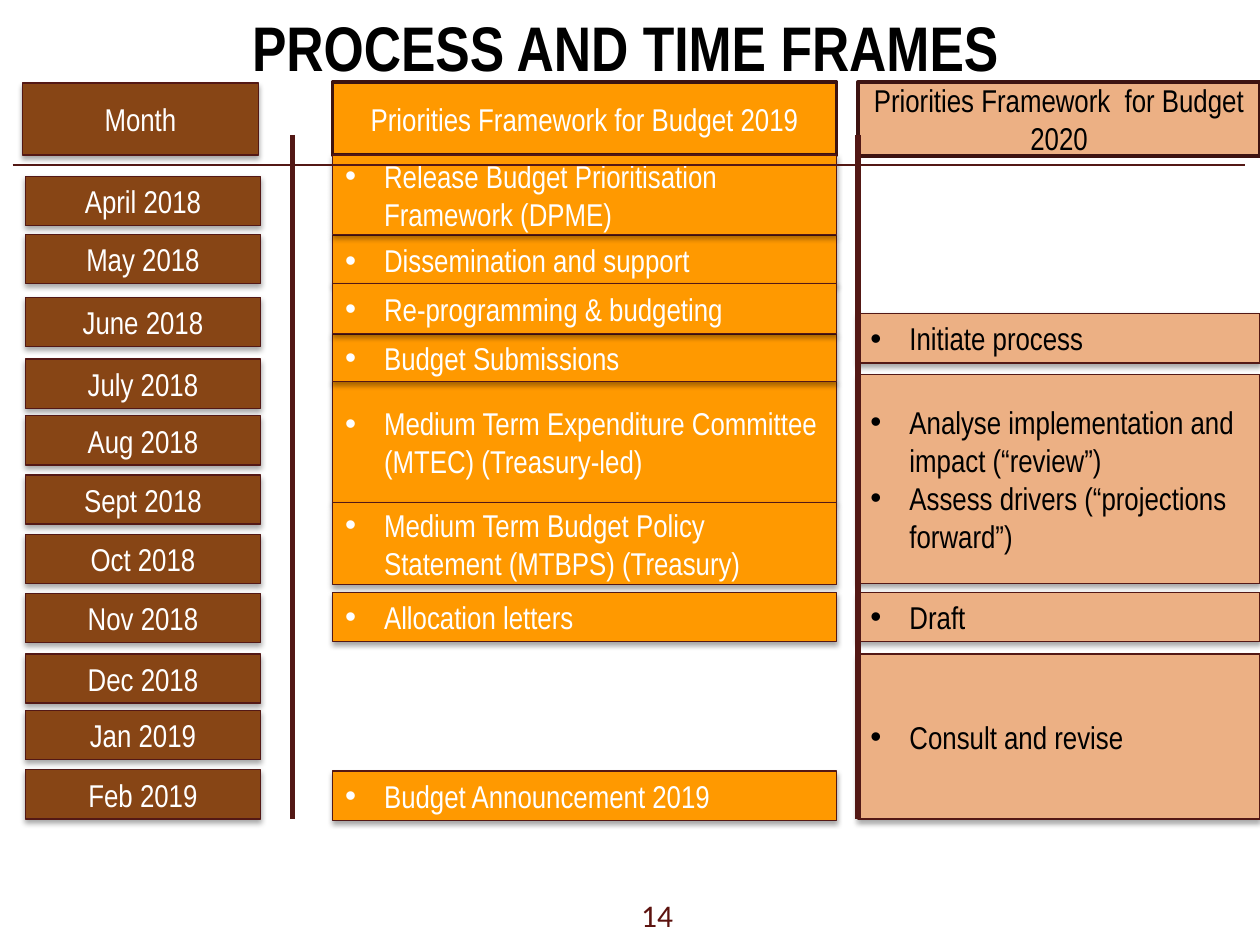
from dataclasses import dataclass

from lxml import etree
from pptx import Presentation
from pptx.dml.color import RGBColor
from pptx.enum.shapes import MSO_CONNECTOR, MSO_SHAPE
from pptx.enum.text import MSO_ANCHOR, PP_ALIGN
from pptx.oxml.ns import qn
from pptx.util import Emu, Pt

RECT = MSO_SHAPE.RECTANGLE
STRAIGHT = MSO_CONNECTOR.STRAIGHT
MIDDLE = MSO_ANCHOR.MIDDLE
CENTER, LEFT = PP_ALIGN.CENTER, PP_ALIGN.LEFT

PX = 9144
INDENT = 31
COLORS = {
    "month": "874515",
    "budget_2019": "FF9900",
    "budget_2020": "ECB084",
    "edge": "531815",
    "header_edge": "3D1311",
    "number": "5C120E",
    "white": "FFFFFF",
    "black": "000000",
}
BODY = {"size": Pt(18), "name": "Arial Narrow"}
TITLE = {"size": Pt(36), "name": "Arial Narrow", "bold": True}
NUMBER = {"size": Pt(18), "name": "Calibri"}


@dataclass(frozen=True)
class Column:
    """Horizontal extent and colours of one column."""
    left: int
    width: int
    fill: str
    text: str


@dataclass(frozen=True)
class Box:
    """Vertical extent and paragraphs of one box in a column."""
    top: int
    height: int
    lines: tuple[str, ...]


@dataclass(frozen=True)
class Rule:
    """A straight dividing line."""
    x1: int
    y1: int
    x2: int
    y2: int
    weight: float


MONTH = Column(20, 187, "month", "white")
MONTH_HEADER = Column(18, 187, "month", "white")
BUDGET_2019 = Column(264, 400, "budget_2019", "white")
BUDGET_2020 = Column(681, 319, "budget_2020", "black")

MONTHS = [
    Box(top, 39, (name,))
    for top, name in [
        (140, "April 2018"), (186, "May 2018"), (236, "June 2018"),
        (285, "July 2018"), (330, "Aug 2018"), (377, "Sept 2018"),
        (424, "Oct 2018"), (471, "Nov 2018"), (519, "Dec 2018"),
        (564, "Jan 2019"), (611, "Feb 2019"),
    ]
]
STEPS_2019 = [
    Box(303, 96, ("Medium Term Expenditure Committee (MTEC) (Treasury-led)",)),
    Box(399, 65, ("Medium Term Budget Policy Statement (MTBPS) (Treasury)",)),
    Box(265, 38, ("Budget Submissions",)),
    Box(187, 39, ("Dissemination and support",)),
    Box(123, 63, ("Release Budget Prioritisation Framework (DPME)",)),
    Box(470, 39, ("Allocation letters",)),
    Box(612, 39, ("Budget Announcement 2019",)),
    Box(225, 40, ("Re-programming & budgeting",)),
]
STEPS_2020 = [
    Box(297, 166, ("Analyse implementation and impact (“review”)",
                   "Assess drivers (“projections forward”)")),
    Box(519, 131, ("Consult and revise",)),
    Box(249, 39, ("Initiate process",)),
    Box(470, 39, ("Draft",)),
]
RULES = [
    Rule(232, 107, 232, 650, 3),
    Rule(681, 107, 681, 650, 3),
    Rule(10, 131, 988, 131, 0.75),
]


def px(*values: int) -> list[Emu]:
    """Turn px lengths into EMU."""
    return [Emu(v * PX) for v in values]


def rgb(name: str) -> RGBColor:
    """Look up a named colour."""
    return RGBColor.from_string(COLORS[name])


def add_bullet(p) -> None:
    """Give a paragraph a hanging round bullet."""
    pPr = p._p.get_or_add_pPr()
    pPr.set("marL", str(INDENT * PX))
    pPr.set("indent", str(-INDENT * PX))
    etree.SubElement(pPr, qn("a:buFont"), typeface="Arial")
    etree.SubElement(pPr, qn("a:buChar"), char="•")


def add_shadow(sp) -> None:
    """Give a shape a soft shadow below it."""
    effects = sp._element.spPr.find(qn("a:effectLst"))
    shadow = etree.SubElement(
        effects, qn("a:outerShdw"), blurRad=str(Pt(3.1)), dist=str(Pt(1.8)),
        dir="5400000", rotWithShape="0")
    color = etree.SubElement(shadow, qn("a:srgbClr"), val=COLORS["black"])
    etree.SubElement(color, qn("a:alpha"), val="35000")


def write(sp, lines: tuple[str, ...], color: str, font: dict,
          bullets: bool = False) -> None:
    """Fill a shape with vertically centred paragraphs."""
    tf = sp.text_frame
    tf.word_wrap = True
    tf.vertical_anchor = MIDDLE
    for i, line in enumerate(lines):
        p = tf.add_paragraph() if i else tf.paragraphs[0]
        p.alignment = LEFT if bullets else CENTER
        if bullets:
            add_bullet(p)
        r = p.add_run()
        r.text = line
        for key, value in font.items():
            setattr(r.font, key, value)
        r.font.color.rgb = rgb(color)


def add_box(s, col: Column, box: Box, bullets: bool = False,
            edge: str = "edge", weight: float = 0.75,
            shadow: bool = True) -> None:
    """Draw one filled box of a column."""
    sp = s.shapes.add_shape(RECT, *px(col.left, box.top, col.width, box.height))
    sp.shadow.inherit = False
    sp.fill.solid()
    sp.fill.fore_color.rgb = rgb(col.fill)
    sp.line.color.rgb = rgb(edge)
    sp.line.width = Pt(weight)
    if shadow:
        add_shadow(sp)
    write(sp, box.lines, col.text, BODY, bullets)


def add_header(s, col: Column, box: Box) -> None:
    """Draw a heavy-edged column header."""
    add_box(s, col, box, edge="header_edge", weight=2, shadow=False)


def add_rule(s, rule: Rule) -> None:
    """Draw one dividing line."""
    c = s.shapes.add_connector(
        STRAIGHT, *px(rule.x1, rule.y1, rule.x2, rule.y2))
    c.line.color.rgb = rgb("edge")
    c.line.width = Pt(rule.weight)
    etree.SubElement(c._element.spPr, qn("a:effectLst"))


def main() -> None:
    """Build and save the slide."""
    prs = Presentation()
    prs.slide_width, prs.slide_height = px(1000, 750)
    s = prs.slides.add_slide(prs.slide_layouts[6])
    write(s.shapes.add_textbox(*px(484, 704, 75, 44)), ("14",), "number", NUMBER)
    write(s.shapes.add_textbox(*px(20, 10, 953, 54)),
          ("PROCESS AND TIME FRAMES",), "black", TITLE)
    add_header(s, BUDGET_2019,
               Box(65, 58, ("Priorities Framework for Budget 2019",)))
    for box in STEPS_2019:
        add_box(s, BUDGET_2019, box, bullets=True)
    add_header(s, BUDGET_2020,
               Box(65, 59, ("Priorities Framework  for Budget 2020",)))
    for box in STEPS_2020:
        add_box(s, BUDGET_2020, box, bullets=True)
    for box in MONTHS:
        add_box(s, MONTH, box)
    for rule in RULES:
        add_rule(s, rule)
    add_box(s, MONTH_HEADER, Box(66, 57, ("Month",)))
    prs.save("out.pptx")


if __name__ == "__main__":
    main()
